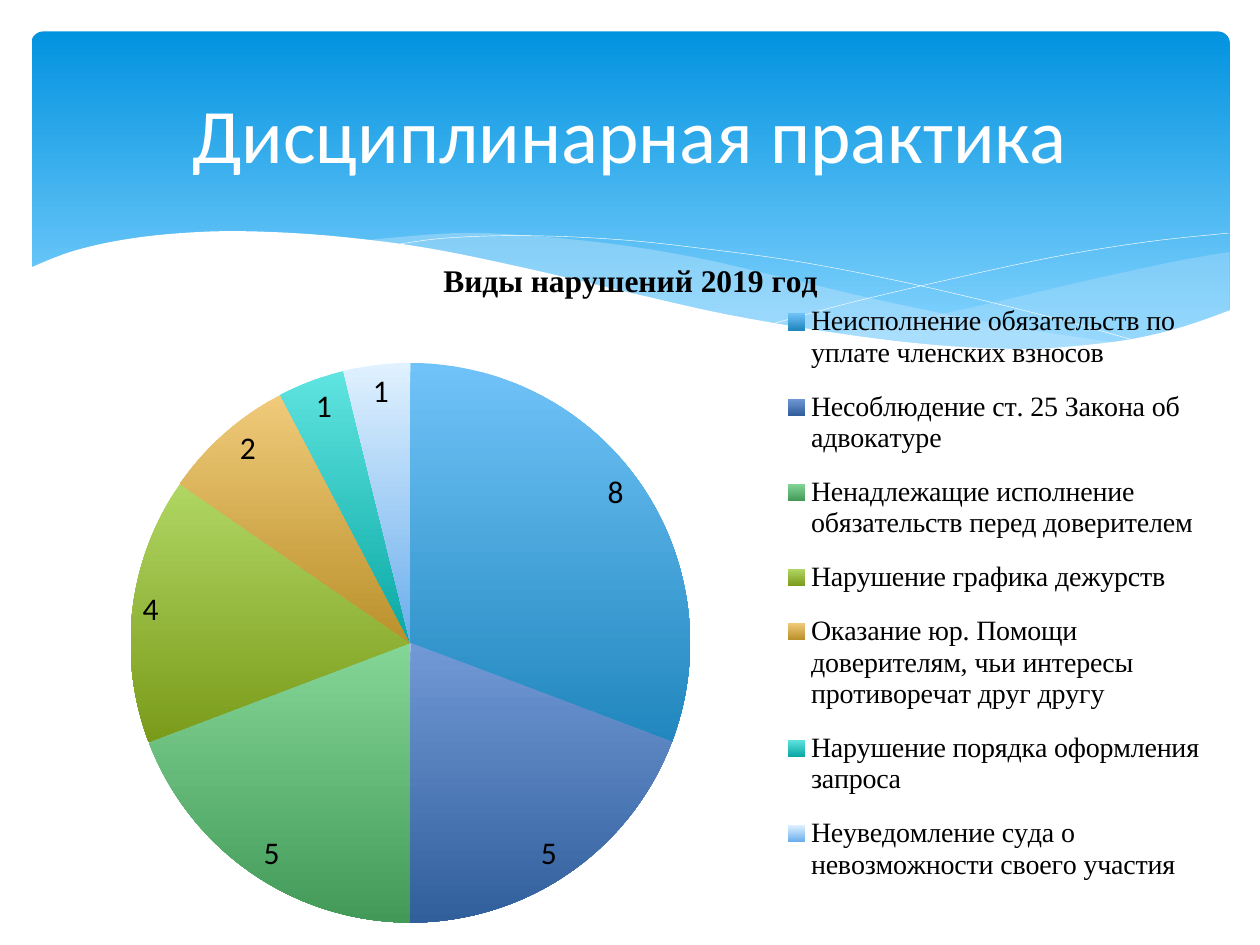
import pptx
import pptx.chart.data
import pptx.dml.color
import pptx.enum.chart
import pptx.enum.shapes
import pptx.enum.text
import pptx.oxml
import pptx.oxml.ns
import pptx.util
from dataclasses import dataclass


@dataclass(frozen=True)
class Theme:
    heading: str = "Calibri"
    body: str = "Times New Roman"
    title_size: int = 44
    chart_size: int = 18
    legend_size: int = 16
    white: str = "FFFFFF"
    black: str = "000000"
    mist: str = "C6E7FC"
    band: tuple = ("0293E0", "83D3FE")


def inches(value):
    return pptx.util.Cm(value * 2.54)


def rgb(value):
    return pptx.dml.color.RGBColor.from_string(value)


def smooth(points, steps=6):
    padded = [points[0], *points, points[-1]]
    curve = [points[0]]
    for a, b, c, d in zip(padded, padded[1:], padded[2:], padded[3:]):
        for step in range(1, steps + 1):
            t = step / steps
            curve.append(tuple(
                (2 * q + (r - p) * t + (2 * p - 5 * q + 4 * r - s) * t ** 2
                 + (3 * q - p - 3 * r + s) * t ** 3) / 2
                for p, q, r, s in zip(a, b, c, d)))
    return curve


class SlideBuilder:
    def __init__(self, deck, theme):
        self.theme = theme
        self.page = deck.slides.add_slide(deck.slide_layouts[5])
        self.shapes = self.page.shapes

    def style_font(self, font, size, name, color, bold=False):
        font.size = pptx.util.Pt(size)
        font.name = name
        font.bold = bold
        font.color.rgb = rgb(color)

    def gradient(self, fill, colors, end=1.0):
        fill.gradient()
        fill.gradient_angle = 270
        for stop, color, position in zip(fill.gradient_stops, colors, (0, end)):
            stop.color.rgb = rgb(color)
            stop.position = position

    def band(self, box):
        shape = self.shapes.add_shape(
            pptx.enum.shapes.MSO_SHAPE.ROUNDED_RECTANGLE, *map(inches, box))
        shape.adjustments[0] = 0.034
        shape.shadow.inherit = False
        shape.line.fill.background()
        self.gradient(shape.fill, self.theme.band, 0.9)

    def outline(self, points, closed):
        start, *rest = [(inches(x), inches(y)) for x, y in points]
        builder = self.shapes.build_freeform(*start)
        builder.add_line_segments(rest, close=closed)
        shape = builder.convert_to_shape()
        shape.shadow.inherit = False
        return shape

    def wave(self, strands, color, opacity=100):
        shape = self.outline([p for strand in strands for p in smooth(strand)], True)
        shape.line.fill.background()
        shape.fill.solid()
        shape.fill.fore_color.rgb = rgb(color)
        if opacity < 100:
            tint = shape.fill._xPr.find(".//" + pptx.oxml.ns.qn("a:srgbClr"))
            alpha = pptx.oxml.parse_xml(
                f'<a:alpha {pptx.oxml.ns.nsdecls("a")} val="{opacity * 1000}"/>')
            tint.append(alpha)

    def ripple(self, points):
        shape = self.outline(smooth(points), False)
        shape.fill.background()
        shape.line.color.rgb = rgb(self.theme.white)
        shape.line.width = pptx.util.Pt(0.25)

    def title(self, text, box):
        title = self.shapes.title
        title.left, title.top, title.width, title.height = map(inches, box)
        frame = title.text_frame
        frame.text = text
        frame.vertical_anchor = pptx.enum.text.MSO_ANCHOR.MIDDLE
        para = frame.paragraphs[0]
        para.alignment = pptx.enum.text.PP_ALIGN.CENTER
        self.style_font(para.font, self.theme.title_size, self.theme.heading,
                        self.theme.white)
        self.shapes._spTree.append(title._element)

    def layout(self, x, y, w, h, inner=False):
        target = '<c:layoutTarget val="inner"/>' if inner else ""
        sizes = "".join(f'<c:{key} val="{value}"/>'
                        for key, value in zip("xywh", (x, y, w, h)))
        return pptx.oxml.parse_xml(
            f'<c:layout {pptx.oxml.ns.nsdecls("c")}><c:manualLayout>{target}'
            '<c:xMode val="edge"/><c:yMode val="edge"/>'
            f'{sizes}</c:manualLayout></c:layout>')

    def place(self, parent, index, layout):
        for old in parent.findall(pptx.oxml.ns.qn("c:layout")):
            parent.remove(old)
        parent.insert(index, layout)

    def pie(self, name, slices, box):
        theme = self.theme
        data = pptx.chart.data.CategoryChartData()
        data.categories = [label for label, _, _ in slices]
        data.add_series(name, [value for _, value, _ in slices])
        chart = self.shapes.add_chart(
            pptx.enum.chart.XL_CHART_TYPE.PIE, *map(inches, box), data).chart
        self.style_font(chart.font, theme.chart_size, theme.heading, theme.black)

        chart.has_title = True
        chart.chart_title.text_frame.text = name
        para = chart.chart_title.text_frame.paragraphs[0]
        self.style_font(para.font, theme.chart_size, theme.body, theme.black, True)

        chart.has_legend = True
        legend = chart.legend
        legend.position = pptx.enum.chart.XL_LEGEND_POSITION.RIGHT
        legend.include_in_layout = False
        self.style_font(legend.font, theme.legend_size, theme.body, theme.black)
        self.place(legend._element, 1, self.layout(0.62, 0.07, 0.37, 0.88))
        self.place(chart._chartSpace.chart.plotArea, 0,
                   self.layout(0.08, 0.18, 0.47, 0.8, True))

        plot = chart.plots[0]
        plot.vary_by_categories = True
        plot.has_data_labels = True
        labels = plot.data_labels
        labels.show_value = True
        labels.show_percentage = False
        labels.position = pptx.enum.chart.XL_LABEL_POSITION.BEST_FIT
        self.style_font(labels.font, theme.chart_size, theme.heading, theme.black)
        for index, (_, _, colors) in enumerate(slices):
            style = plot.series[0].points[index].format
            self.gradient(style.fill, colors)
            style.line.fill.background()


RIGHT_WAVE = [
    [(9.76, 2), (9.35, 2.07), (8.61, 2.23), (7.53, 2.48), (6.61, 2.65)],
    [(6.61, 2.65), (7.32, 2.74), (8.03, 2.78), (8.72, 2.74), (9.28, 2.63), (9.76, 2.47)],
]
LONG_WAVE = [
    [(8.93, 2.73), (8.07, 2.6), (7.06, 2.4), (6.29, 2.22), (5.55, 2.05), (4.89, 1.94),
     (4.2, 1.87), (3.61, 1.85), (2.86, 1.91)],
    [(2.86, 1.91), (3.62, 2.03), (4.49, 2.22), (5.66, 2.48), (6.5, 2.64), (7.22, 2.74),
     (7.96, 2.78), (8.48, 2.77), (8.93, 2.73)],
]
FALLING_RIPPLE = [
    (3.09, 1.95), (3.53, 1.89), (4.16, 1.87), (4.89, 1.9), (5.56, 1.97), (6.36, 2.08),
    (7.27, 2.26), (8.31, 2.51), (9.07, 2.72)]
RISING_RIPPLE = [
    (6.13, 2.57), (6.72, 2.41), (7.48, 2.23), (8.36, 2.04), (9.1, 1.92), (9.75, 1.85)]
WHITE_WAVE = [
    [(9.77, 2.46), (9.4, 2.59), (8.99, 2.69), (8.5, 2.75), (8.09, 2.77), (7.44, 2.74),
     (6.68, 2.65), (5.79, 2.5), (5.03, 2.33), (4.18, 2.13), (3.4, 1.97), (2.71, 1.88),
     (2.11, 1.84), (1.61, 1.84), (1.06, 1.89), (0.59, 1.99), (0.23, 2.13)],
    [(0.23, 3.29), (9.77, 3.29)],
]
VIOLATIONS = [
    ("Неисполнение обязательств по уплате членских взносов", 8, ("70C3F8", "2187BE")),
    ("Несоблюдение ст. 25 Закона об адвокатуре", 5, ("7099D6", "315F9B")),
    ("Ненадлежащие исполнение обязательств перед доверителем", 5, ("84D697", "439A58")),
    ("Нарушение графика дежурств", 4, ("B0D663", "7A9B1A")),
    ("Оказание юр. Помощи доверителям, чьи интересы противоречат друг другу", 2,
     ("F0CA7A", "BA912B")),
    ("Нарушение порядка оформления запроса", 1, ("5FE4E0", "0AA8A4")),
    ("Неуведомление суда о невозможности своего участия", 1, ("E0F1FF", "6AAEEC")),
]


def main():
    deck = pptx.Presentation()
    deck.slide_width, deck.slide_height = inches(10), inches(7.5)
    theme = Theme()
    slide = SlideBuilder(deck, theme)
    slide.band((0.25, 0.25, 9.51, 2.7))
    slide.wave(RIGHT_WAVE, theme.mist, 29)
    slide.wave(LONG_WAVE, theme.mist, 40)
    slide.ripple(FALLING_RIPPLE)
    slide.ripple(RISING_RIPPLE)
    slide.wave(WHITE_WAVE, theme.white)
    slide.pie("Виды нарушений 2019 год", VIOLATIONS, (0.28, 1.86, 9.45, 5.59))
    slide.title("Дисциплинарная практика", (0.5, 0.37, 9, 1.37))
    deck.save("out.pptx")


if __name__ == "__main__":
    main()
